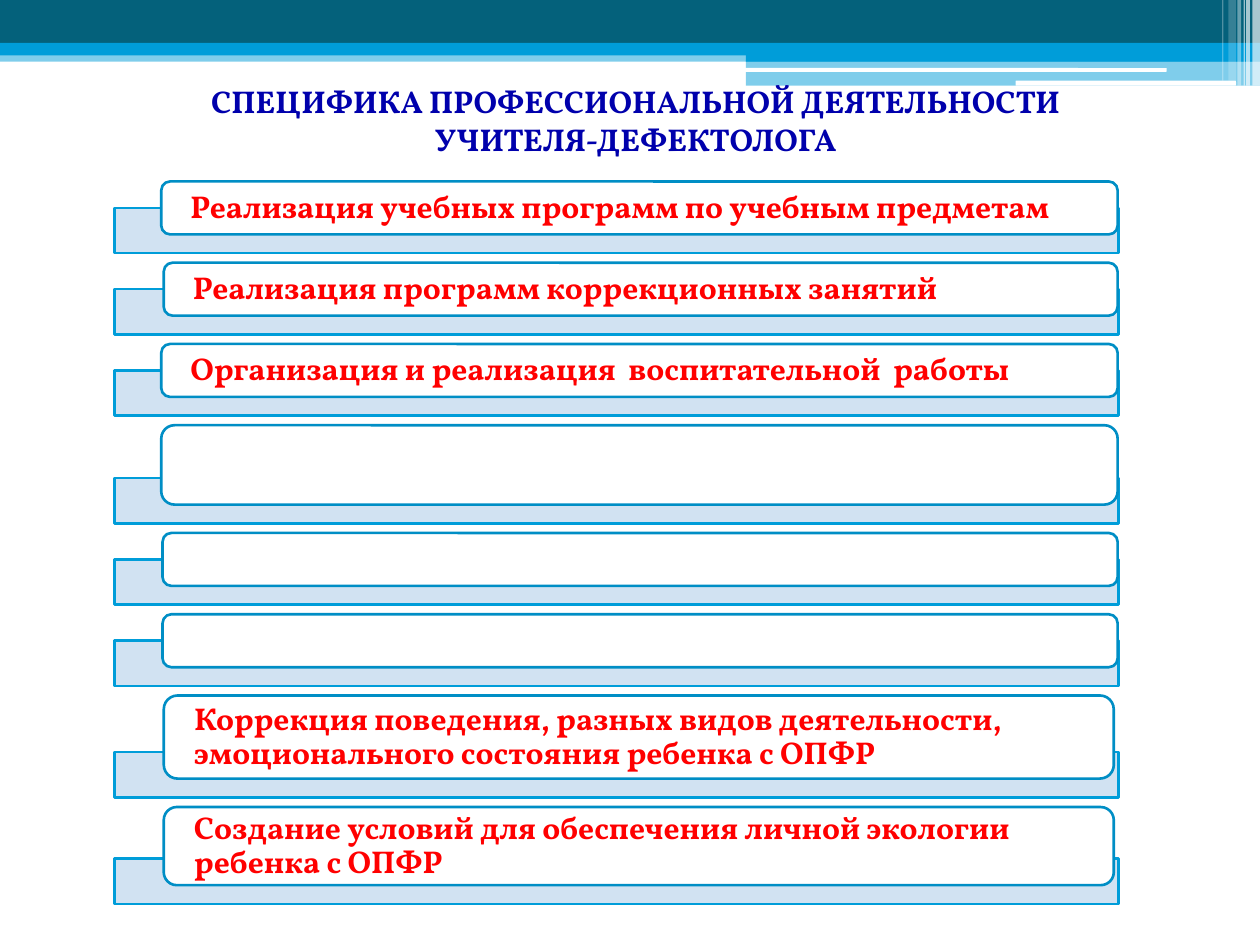
import pptx
import pptx.dml.color
import pptx.enum.shapes
import pptx.enum.text
import pptx.oxml
import pptx.oxml.ns
import pptx.util

COLORS = {
    "teal": "04617B",
    "blue": "009DD9",
    "edge": "008EC5",
    "pale": "CCDFF1",
    "white": "FFFFFF",
    "title": "0000AC",
    "red": "FF0000",
}
SHAPES = pptx.enum.shapes.MSO_SHAPE
ANCHOR = pptx.enum.text.MSO_ANCHOR
ALIGN = pptx.enum.text.PP_ALIGN

BANDS = [
    (0, 4, 100, 0.9, "blue", 50),
    (0, 0, 100, 3.4, "teal", 100),
    (0, 3.4, 100, 1, "blue", 100),
    (59.2, 3.9, 40.8, 1, "blue", 100),
    (59.2, 4.8, 40.8, 2, "blue", 50),
]
PILLS = [(59.1, 5.4, 33.5, 0.3), (80.6, 6.4, 17.5, 0.4)]
STRIPES = [
    (99.4, 0.6, 6.8, 65),
    (98.9, 0.3, 6.8, 65),
    (98.7, 0.1, 6.8, 60),
    (98.2, 0.3, 6.8, 40),
    (97.5, 0.6, 6.4, 20),
    (97, 0.1, 6.4, 30),
]
TITLE = ["СПЕЦИФИКА ПРОФЕССИОНАЛЬНОЙ ДЕЯТЕЛЬНОСТИ", "УЧИТЕЛЯ-ДЕФЕКТОЛОГА"]
TASKS = [
    (12.8, 75.9, 4.2, "Реализация учебных программ по учебным предметам"),
    (13, 75.7, 4.2, "Реализация программ коррекционных занятий"),
    (12.8, 75.9, 4.2, "Организация и реализация  воспитательной  работы"),
    (12.8, 75.9, 6.3, ""),
    (12.9, 75.8, 4.2, ""),
    (12.9, 75.8, 4.2, ""),
    (13, 75.4, 6.6, "Коррекция поведения, разных видов деятельности, "
                    "эмоционального состояния ребенка с ОПФР"),
    (13, 75.4, 6.2, "Создание условий для обеспечения личной экологии "
                    "ребенка с ОПФР"),
]
FIRST_TASK, BAR_HEIGHT, BAR_DROP, TASK_GAP = 14.4, 3.6, 1.5, 0.75


class Painter:
    """Draw styled elements on one slide over a grid of 100 columns by 75 rows."""

    font = "Vollkorn"
    size = pptx.util.Pt(18)
    border = pptx.util.Pt(1.5)
    inset = pptx.util.Inches(0.21)

    def __init__(self, deck):
        self.cell_width = deck.slide_width / 100
        self.cell_height = deck.slide_height / 75
        self.page = deck.slides.add_slide(deck.slide_layouts[6])

    def place(self, left, top, width, height):
        return (
            round(left * self.cell_width),
            round(top * self.cell_height),
            round(width * self.cell_width),
            round(height * self.cell_height),
        )

    def color(self, name):
        return pptx.dml.color.RGBColor.from_string(COLORS[name])

    def shape(self, kind, area, fill, opacity=100, line=None):
        box = self.page.shapes.add_shape(kind, *self.place(*area))
        box.shadow.inherit = False
        box.fill.solid()
        box.fill.fore_color.rgb = self.color(fill)
        if opacity < 100:
            tint = box.element.spPr.find(".//" + pptx.oxml.ns.qn("a:srgbClr"))
            alpha = pptx.oxml.parse_xml(
                f'<a:alpha {pptx.oxml.ns.nsdecls("a")} val="{opacity * 1000}"/>'
            )
            tint.append(alpha)
        if line:
            box.line.color.rgb = self.color(line)
            box.line.width = self.border
        else:
            box.line.fill.background()
        return box

    def add_span(self, para, text, color):
        span = para.add_run()
        span.text = text
        span.font.name = self.font
        span.font.size = self.size
        span.font.bold = True
        span.font.color.rgb = self.color(color)

    def title(self, area, lines):
        frame = self.page.shapes.add_textbox(*self.place(*area)).text_frame
        frame.word_wrap = True
        for number, line in enumerate(lines):
            para = frame.add_paragraph() if number else frame.paragraphs[0]
            para.alignment = ALIGN.CENTER
            self.add_span(para, line, "title")

    def task(self, left, top, width, height, text):
        bar_top = top + height + BAR_DROP - BAR_HEIGHT
        self.shape(SHAPES.RECTANGLE, (9.1, bar_top, 79.7, BAR_HEIGHT), "pale", 90, "blue")
        area = (left, top, width, height)
        box = self.shape(SHAPES.ROUNDED_RECTANGLE, area, "white", line="edge")
        if text:
            frame = box.text_frame
            frame.word_wrap = True
            frame.vertical_anchor = ANCHOR.MIDDLE
            frame.margin_left = frame.margin_right = self.inset
            frame.margin_top = frame.margin_bottom = 0
            para = frame.paragraphs[0]
            para.alignment = ALIGN.LEFT
            para.line_spacing = 0.9
            self.add_span(para, text, "red")


def main():
    deck = pptx.Presentation()
    deck.slide_width = pptx.util.Inches(10)
    deck.slide_height = pptx.util.Inches(7.5)
    painter = Painter(deck)
    for *area, fill, opacity in BANDS:
        painter.shape(SHAPES.RECTANGLE, area, fill, opacity)
    for area in PILLS:
        painter.shape(SHAPES.ROUNDED_RECTANGLE, area, "white")
    for left, width, height, opacity in STRIPES:
        painter.shape(SHAPES.RECTANGLE, (left, 0, width, height), "white", opacity)
    painter.title((2.4, 6, 96.1, 7.1), TITLE)
    top = FIRST_TASK
    for left, width, height, text in TASKS:
        painter.task(left, top, width, height, text)
        top += height + BAR_DROP + TASK_GAP
    deck.save("out.pptx")


if __name__ == "__main__":
    main()
